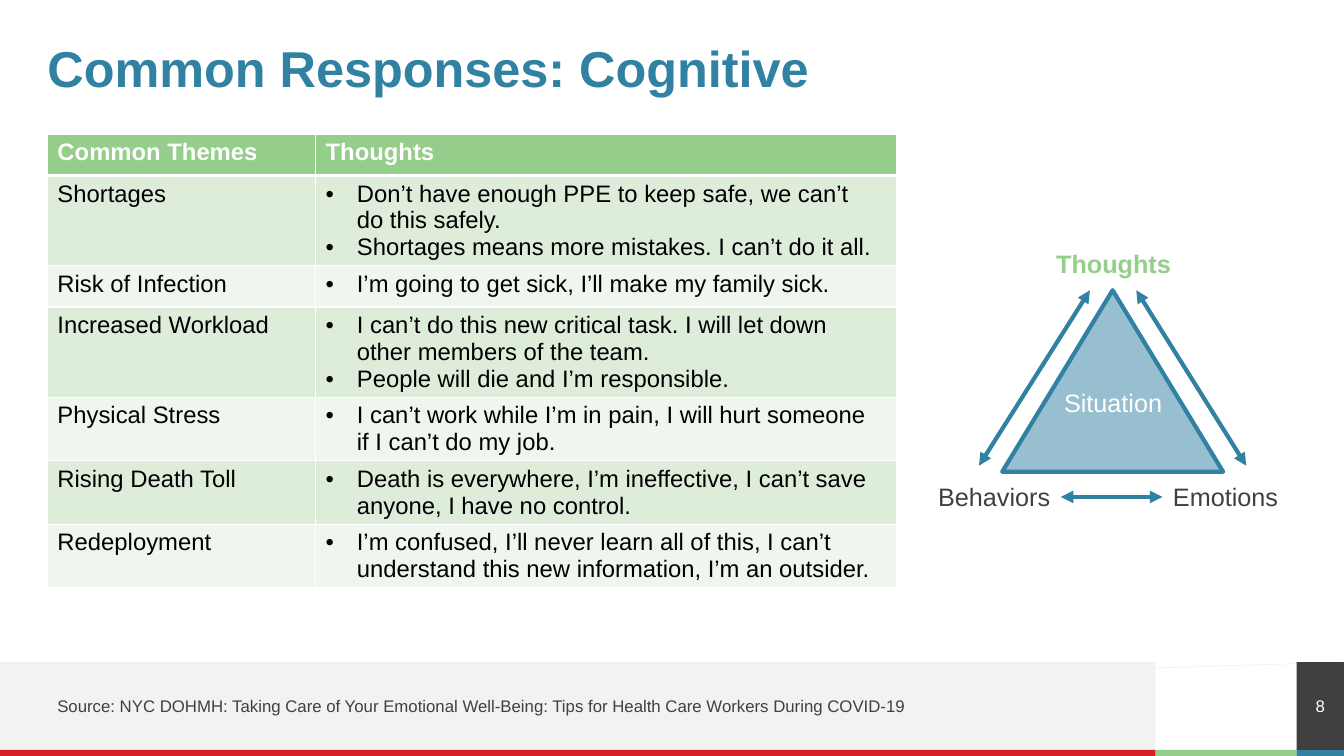
from dataclasses import dataclass

from lxml import etree
from pptx import Presentation
from pptx.dml.color import RGBColor
from pptx.enum.shapes import MSO_CONNECTOR, MSO_SHAPE
from pptx.enum.text import MSO_ANCHOR, MSO_AUTO_SIZE, PP_ALIGN
from pptx.oxml.ns import qn
from pptx.util import Inches, Pt

RECTANGLE, TRIANGLE = MSO_SHAPE.RECTANGLE, MSO_SHAPE.ISOSCELES_TRIANGLE
STRAIGHT = MSO_CONNECTOR.STRAIGHT
LEFT, CENTER = PP_ALIGN.LEFT, PP_ALIGN.CENTER
TOP, MIDDLE = MSO_ANCHOR.TOP, MSO_ANCHOR.MIDDLE
GROW = MSO_AUTO_SIZE.SHAPE_TO_FIT_TEXT

WHITE = RGBColor(0xFF, 0xFF, 0xFF)
BLACK = RGBColor(0x00, 0x00, 0x00)
BLUE = RGBColor(0x30, 0x81, 0xA2)
GREEN = RGBColor(0x95, 0xCD, 0x8B)
RED = RGBColor(0xD7, 0x1D, 0x24)
DARK_GRAY = RGBColor(0x40, 0x40, 0x40)
LIGHT_GRAY = RGBColor(0xF2, 0xF2, 0xF2)
BANDS = (RGBColor(0xDD, 0xED, 0xDA), RGBColor(0xEF, 0xF6, 0xEE))
FONT = "Arial"


@dataclass
class Block:
    left: float
    top: float
    width: float
    height: float
    color: RGBColor


@dataclass
class Label:
    text: str
    left: float
    top: float
    width: float
    color: RGBColor
    bold: bool = False


@dataclass
class Theme:
    name: str
    thoughts: list[str]


FOOTER_BLOCKS = [
    Block(11.46, 7.44, 1.4, 0.07, GREEN),
    Block(0, 6.57, 11.46, 0.87, LIGHT_GRAY),
    Block(0, 7.44, 11.46, 0.07, RED),
    Block(12.86, 7.44, 0.47, 0.06, BLUE),
]
NUMBER_BLOCK = Block(12.86, 6.57, 0.47, 0.87, DARK_GRAY)

LABELS = [
    Label("Thoughts", 10.37, 2.41, 1.35, GREEN, bold=True),
    Label("Behaviors", 9.2, 4.73, 1.32, DARK_GRAY),
    Label("Emotions", 11.53, 4.73, 1.25, DARK_GRAY),
    Label("Situation", 10.45, 3.79, 1.18, WHITE),
]

THEMES = [
    Theme("Shortages", [
        "Don’t have enough PPE to keep safe, we can’t do this safely.",
        "Shortages means more mistakes. I can’t do it all."]),
    Theme("Risk of Infection", ["I’m going to get sick, I’ll make my family sick."]),
    Theme("Increased Workload", [
        "I can’t do this new critical task. I will let down other members of the team.",
        "People will die and I’m responsible."]),
    Theme("Physical Stress", [
        "I can’t work while I’m in pain, I will hurt someone if I can’t do my job."]),
    Theme("Rising Death Toll", [
        "Death is everywhere, I’m ineffective, I can’t save anyone, I have no control."]),
    Theme("Redeployment", [
        "I’m confused, I’ll never learn all of this, I can’t understand this new "
        "information, I’m an outsider."]),
]


def write_text(frame, *lines: str, size: float, color: RGBColor, bold: bool = False,
               align=LEFT, bullet: bool = False, spacing: float | None = None) -> None:
    for index, line in enumerate(lines):
        paragraph = frame.paragraphs[0] if index == 0 else frame.add_paragraph()
        paragraph.alignment = align
        if spacing:
            paragraph.line_spacing = spacing
        if bullet:
            properties = paragraph._p.get_or_add_pPr()
            properties.set("marL", str(Inches(0.31)))
            properties.set("indent", str(-Inches(0.31)))
            etree.SubElement(properties, qn("a:buFont"), typeface=FONT)
            etree.SubElement(properties, qn("a:buChar"), char="•")
        run = paragraph.add_run()
        run.text = line
        run.font.name, run.font.size, run.font.bold = FONT, Pt(size), bold
        run.font.color.rgb = color


def clear_margins(frame) -> None:
    frame.margin_left = frame.margin_top = frame.margin_right = frame.margin_bottom = 0


def add_block(slide, block: Block, preset=RECTANGLE):
    shape = slide.shapes.add_shape(preset, Inches(block.left), Inches(block.top),
                                   Inches(block.width), Inches(block.height))
    shape.shadow.inherit = False
    shape.fill.solid()
    shape.fill.fore_color.rgb = block.color
    shape.line.fill.background()
    return shape


def add_text_box(slide, left: float, top: float, width: float, height: float, wrap: bool):
    box = slide.shapes.add_textbox(Inches(left), Inches(top), Inches(width), Inches(height))
    box.text_frame.word_wrap = wrap
    box.text_frame.auto_size = GROW
    return box


def add_line(slide, start: tuple[float, float], end: tuple[float, float],
             color: RGBColor, width: float, arrows: bool = False):
    connector = slide.shapes.add_connector(STRAIGHT, *map(Inches, start + end))
    connector.line.color.rgb = color
    connector.line.width = Pt(width)
    if arrows:
        for tag in ("a:headEnd", "a:tailEnd"):
            etree.SubElement(connector.line._ln, qn(tag), type="triangle")
    etree.SubElement(connector._element.spPr, qn("a:effectLst"))
    return connector


def format_cell(cell, fill: RGBColor, bottom_width: float = 1, top_width: float = 1) -> None:
    properties = cell._tc.get_or_add_tcPr()
    widths = {"a:lnL": 1, "a:lnR": 1, "a:lnT": top_width, "a:lnB": bottom_width}
    for tag, width in widths.items():
        border = etree.SubElement(properties, qn(tag), w=str(Pt(width)))
        solid = etree.SubElement(border, qn("a:solidFill"))
        etree.SubElement(solid, qn("a:srgbClr"), val=str(WHITE))
    cell.fill.solid()
    cell.fill.fore_color.rgb = fill
    cell.vertical_anchor = TOP


def add_theme_table(slide) -> None:
    row_count = len(THEMES) + 1
    table = slide.shapes.add_table(row_count, 2, Inches(0.47), Inches(1.33),
                                   Inches(8.42), Inches(0.41 * row_count)).table
    for column, width in zip(table.columns, (2.66, 5.76)):
        column.width = Inches(width)
    for column, heading in enumerate(("Common Themes", "Thoughts")):
        cell = table.cell(0, column)
        format_cell(cell, GREEN, bottom_width=3)
        write_text(cell.text_frame, heading, size=17, color=WHITE, bold=True)
    for row, theme in enumerate(THEMES, start=1):
        name_cell, thought_cell = table.cell(row, 0), table.cell(row, 1)
        for cell in (name_cell, thought_cell):
            format_cell(cell, BANDS[(row - 1) % 2], top_width=3 if row == 1 else 1)
        thought_cell.margin_right = Inches(0.2)
        write_text(name_cell.text_frame, theme.name, size=17, color=BLACK)
        write_text(thought_cell.text_frame, *theme.thoughts, size=17, color=BLACK, bullet=True)


def add_triangle_diagram(slide) -> None:
    triangle = add_block(slide, Block(9.94, 2.88, 2.19, 1.8, BLUE), TRIANGLE)
    triangle.line.color.rgb = BLUE
    triangle.line.width = Pt(3)
    fill_color = triangle._element.spPr.find(qn("a:solidFill")).find(qn("a:srgbClr"))
    etree.SubElement(fill_color, qn("a:alpha"), val="50000")

    boxes = {}
    for label in LABELS:
        box = add_text_box(slide, label.left, label.top, label.width, 0.4, wrap=False)
        write_text(box.text_frame, label.text, size=18, color=label.color,
                   bold=label.bold, align=CENTER)
        boxes[label.text] = box

    add_line(slide, (11.27, 2.88), (12.36, 4.62), BLUE, 3, arrows=True)
    add_line(slide, (10.81, 2.88), (9.71, 4.62), BLUE, 3, arrows=True)
    base = add_line(slide, (10.52, 4.93), (11.53, 4.93), BLUE, 3, arrows=True)
    base.begin_connect(boxes["Behaviors"], 3)
    base.end_connect(boxes["Emotions"], 1)


def main() -> None:
    presentation = Presentation()
    presentation.slide_width, presentation.slide_height = Inches(13.33), Inches(7.5)
    slide = presentation.slides.add_slide(presentation.slide_layouts[5])

    # Footer bands
    for block in FOOTER_BLOCKS:
        add_block(slide, block)
    add_line(slide, (13.33, 6.57), (0, 6.97), LIGHT_GRAY, 0.5)

    # Title
    title = slide.shapes.title
    title.left, title.top = Inches(0.47), Inches(0.47)
    title.width, title.height = Inches(12.39), Inches(0.47)
    clear_margins(title.text_frame)
    title.text_frame.vertical_anchor = MIDDLE
    write_text(title.text_frame, "Common Responses: Cognitive", size=36, color=BLUE,
               bold=True, spacing=0.9)

    # Slide number
    number = add_block(slide, NUMBER_BLOCK)
    clear_margins(number.text_frame)
    number.text_frame.vertical_anchor = MIDDLE
    write_text(number.text_frame, "8", size=12, color=WHITE, align=CENTER)

    # Table and diagram
    add_theme_table(slide)
    add_triangle_diagram(slide)

    # Source
    source = add_text_box(slide, 0.47, 6.85, 9.24, 0.3, wrap=True)
    write_text(source.text_frame, "Source: NYC DOHMH: Taking Care of Your Emotional Well-Being: "
               "Tips for Health Care Workers During COVID-19", size=12, color=DARK_GRAY)

    presentation.save("out.pptx")


if __name__ == "__main__":
    main()
